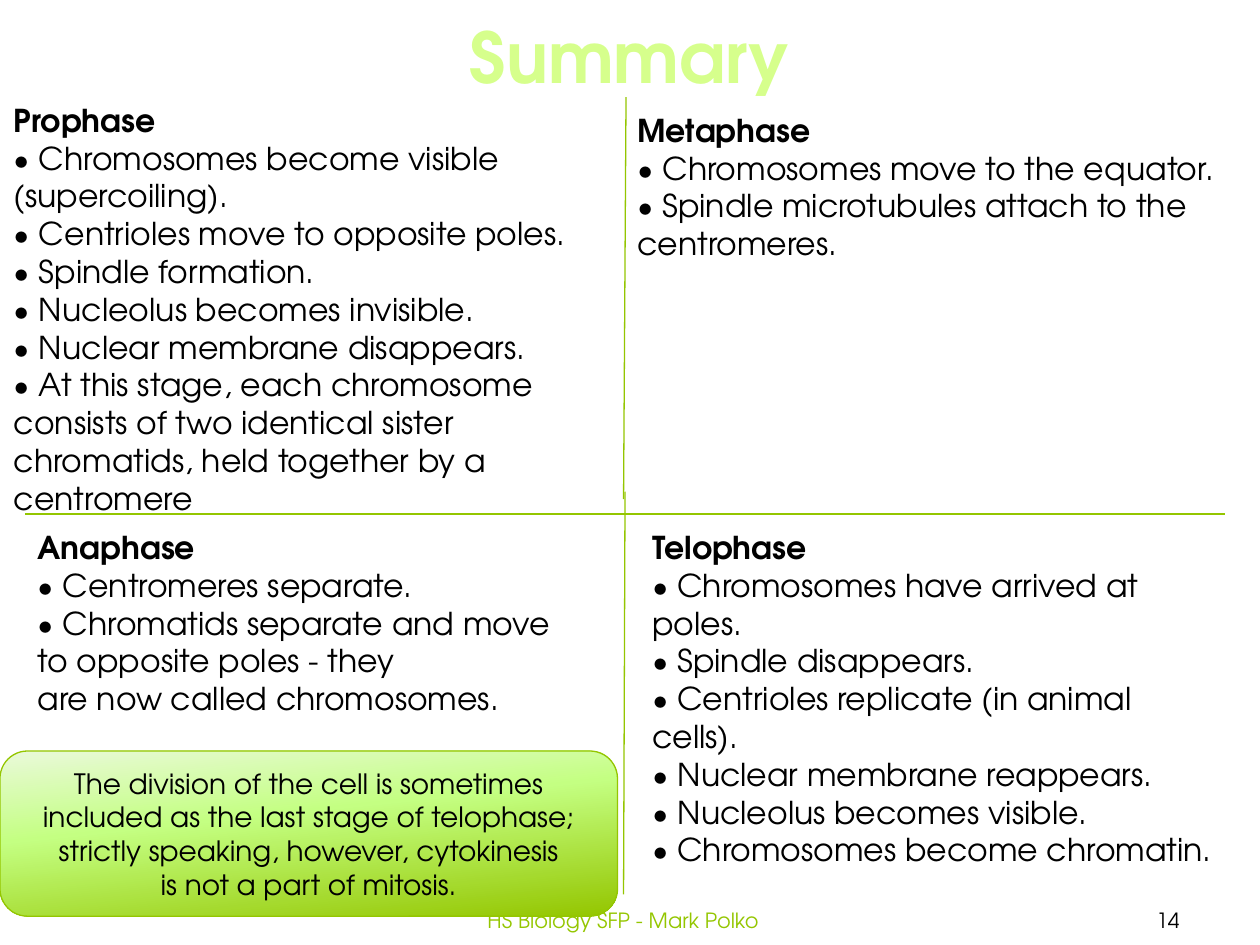
from copy import deepcopy
from pptx import Presentation
from pptx.dml.color import RGBColor
from pptx.enum.shapes import MSO_CONNECTOR, MSO_SHAPE
from pptx.enum.text import MSO_ANCHOR, PP_ALIGN
from pptx.oxml.ns import qn
from pptx.oxml.xmlchemy import OxmlElement
from pptx.util import Cm, Pt

LINE = MSO_CONNECTOR.STRAIGHT
ROUND = MSO_SHAPE.ROUNDED_RECTANGLE
MIDDLE, TOP = MSO_ANCHOR.MIDDLE, MSO_ANCHOR.TOP
LEFT, CENTER = PP_ALIGN.LEFT, PP_ALIGN.CENTER
FACE = "TeX Gyre Adventor"
GREEN, BLACK = "94C600", "000000"


def color(code):
    return RGBColor.from_string(code)


def write(shape, lines, size, tint=BLACK, align=CENTER, anchor=MIDDLE, head=False):
    frame = shape.text_frame
    frame.word_wrap = True
    frame.vertical_anchor = anchor
    frame.text = "\n".join(lines)
    for i, para in enumerate(frame.paragraphs):
        para.alignment = align
        look = {"name": FACE, "size": Pt(size), "bold": head and i == 0}
        for key, value in look.items():
            setattr(para.font, key, value)
        para.font.color.rgb = color(tint)


deck = Presentation()
deck.slide_width, deck.slide_height = Cm(25.4), Cm(19.05)
slide = deck.slides.add_slide(deck.slide_layouts[5])
shapes = slide.shapes

title = shapes.title
place = {"left": Cm(9.19), "top": Cm(0.13), "width": Cm(7.01), "height": Cm(1.96)}
for key, value in place.items():
    setattr(title, key, value)
write(title, ["Summary"], 40, "D6FF8C", head=True)
title.text_frame.word_wrap = False

feet = [
    (21.69, 3.71, "14", BLACK),
    (7.7, 9.73, "HS Biology SFP - Mark Polko", GREEN),
]
for x, wide, text, tint in feet:
    write(shapes.add_textbox(Cm(x), Cm(18.03), Cm(wide), Cm(1.02)), [text], 12, tint)

note = shapes.add_shape(ROUND, Cm(0), Cm(15.14), Cm(12.45), Cm(3.33))
note.shadow.inherit = False
note.line.color.rgb = color(GREEN)
note.line.width = Pt(0.75)
note.fill.gradient()
note.fill.gradient_angle = 276
stops = note.element.spPr.find(".//" + qn("a:gsLst"))
stops.append(deepcopy(stops[-1]))
shades = [(0, "EAF9DA"), (0.4, "C4FF82"), (1, GREEN)]
for stop, (spot, tint) in zip(note.fill.gradient_stops, shades):
    stop.position = spot
    stop.color.rgb = color(tint)
write(note, [
    "The division of the cell is sometimes included as the last stage of telophase; "
    "strictly speaking, however, cytokinesis",
    "is not a part of mitosis.",
], 16)

rules = [
    (0.51, 10.36, 24.69, 10.36),
    (12.6, 9.91, 12.57, 18.03),
    (12.62, 1.96, 12.57, 10.06),
]
for ends in rules:
    rule = shapes.add_connector(LINE, *map(Cm, ends))
    rule.line.color.rgb = color(GREEN)
    rule.line.width = Pt(0.75)
    rule.element.spPr.append(OxmlElement("a:effectLst"))

phases = [
    (0.51, 10.52, 11.2, 4.11, [
        "Anaphase",
        "• Centromeres separate.",
        "• Chromatids separate and move to opposite poles - they",
        "are now called chromosomes.",
    ]),
    (12.9, 10.52, 11.81, 7.95, [
        "Telophase",
        "• Chromosomes have arrived at poles.",
        "• Spindle disappears.",
        "• Centrioles replicate (in animal cells).",
        "• Nuclear membrane reappears.",
        "• Nucleolus becomes visible.",
        "• Chromosomes become chromatin.",
    ]),
    (12.6, 2.11, 12.7, 3.33, [
        "Metaphase",
        "• Chromosomes move to the equator.",
        "• Spindle microtubules attach to the centromeres.",
    ]),
    (0.03, 1.91, 12.85, 8.71, [
        "Prophase",
        "• Chromosomes become visible (supercoiling).",
        "• Centrioles move to opposite poles.",
        "• Spindle formation.",
        "• Nucleolus becomes invisible.",
        "• Nuclear membrane disappears.",
        "• At this stage, each chromosome consists of two identical sister "
        "chromatids, held together by a centromere",
    ]),
]
for *area, lines in phases:
    write(shapes.add_textbox(*map(Cm, area)), lines, 18, BLACK, LEFT, TOP, True)

deck.save("out.pptx")
